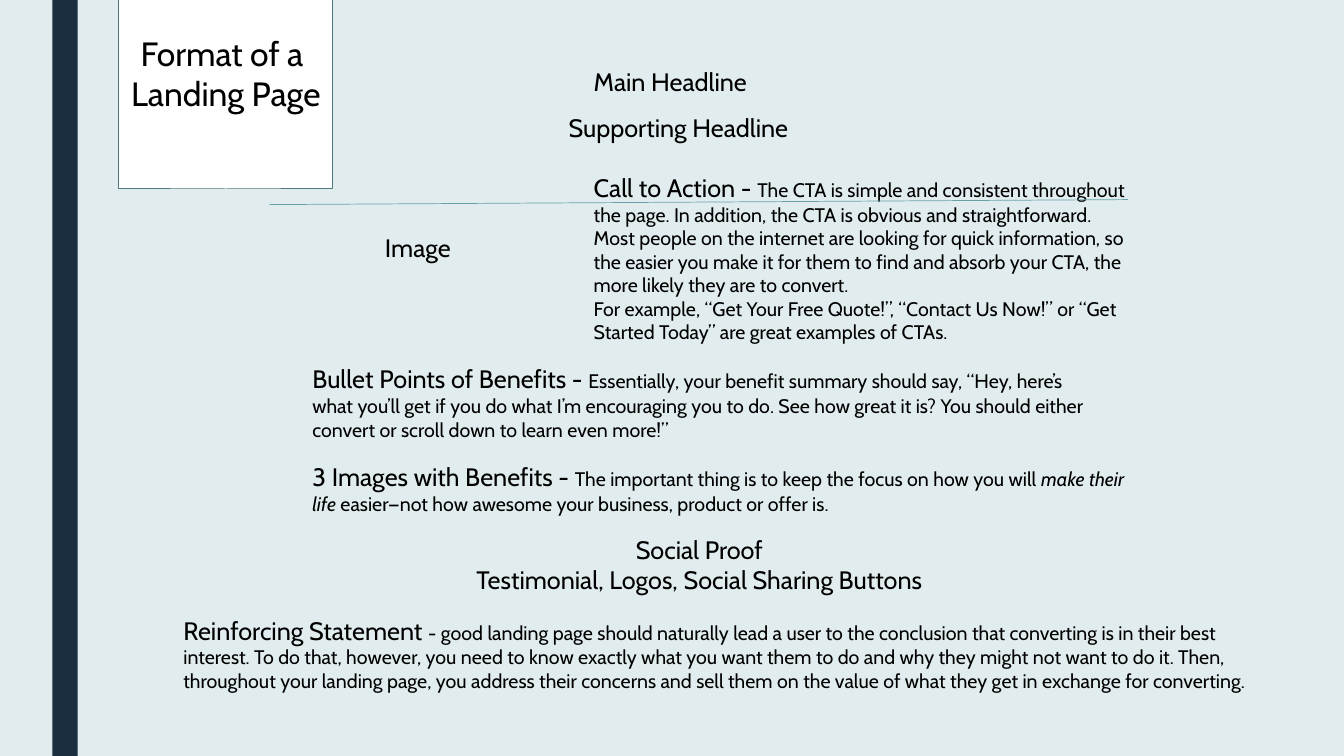
from lxml.etree import SubElement
from pptx import Presentation
from pptx.dml.color import RGBColor
from pptx.enum.shapes import MSO_CONNECTOR, MSO_SHAPE
from pptx.enum.text import MSO_ANCHOR, MSO_AUTO_SIZE, PP_ALIGN
from pptx.oxml.ns import qn
from pptx.util import Inches, Pt

FONT = "Cabin"
BACK, BAR, INK, WHITE = "E1ECEE", "1A2E40", "000000", "FFFFFF"
EDGE, RULE = "4E777F", "69A1AB"
LEAD, BODY, HEAD = 18, 14, 24

TITLE = ((1.18, 0.27, 2.12, 0.91), ["Format of a ", "Landing Page"])

LABELS = [
    ((5.79, 0.61, 1.75, 0.4), False, ["Main Headline"]),
    ((5.54, 1.07, 2.79, 0.4), False, ["Supporting Headline"]),
    ((3.72, 2.26, 0.86, 0.4), False, ["Image"]),
    ((4.59, 5.25, 4.69, 0.71), True,
     ["Social Proof", "Testimonial, Logos, Social Sharing Buttons"]),
]

NOTES = [
    ((5.79, 1.66, 5.54, 2.02), "Call to Action - ", [
        [("The CTA is simple and consistent throughout the page. In addition, "
          "the CTA is obvious and straightforward. Most people on the internet "
          "are looking for quick information, so the easier you make it for "
          "them to find and absorb your CTA, the more likely they are to "
          "convert.", False)],
        [("For example, “Get Your Free Quote!”, “Contact Us Now!” or “Get "
          "Started Today” are great examples of CTAs.", False)]]),
    ((3, 3.56, 7.86, 0.88), "Bullet Points of Benefits - ", [
        [("Essentially, your benefit summary should say, “Hey, here’s what "
          "you’ll get if you do what I’m encouraging you to do. See how great "
          "it is? You should either convert or scroll down to learn even "
          "more!”", False)]]),
    ((3, 4.53, 8.31, 0.64), "3 Images with Benefits - ", [
        [("The important thing is to keep the focus on how you will ", False),
         ("make their life", True),
         (" easier—not how awesome your business, product or offer is.",
          False)]]),
    ((1.72, 6.05, 11.02, 0.91), "Reinforcing Statement ", [
        [("- good landing page should naturally lead a user to the conclusion "
          "that converting is in their best interest. To do that, however, you "
          "need to know exactly what you want them to do and why they might "
          "not want to do it. Then, throughout your landing page, you address "
          "their concerns and sell them on the value of what they get in "
          "exchange for converting.", False)]]),
]


def color(code):
    return RGBColor.from_string(code)


def paint(item, code):
    item.fill.solid()
    item.fill.fore_color.rgb = color(code)


def style(para, size, mid=False):
    para.font.name = FONT
    para.font.size = Pt(size)
    para.font.color.rgb = color(INK)
    para.alignment = PP_ALIGN.CENTER if mid else PP_ALIGN.LEFT


def write(frame, lines, size, mid):
    for i, line in enumerate(lines):
        para = frame.add_paragraph() if i else frame.paragraphs[0]
        para.add_run().text = line
        style(para, size, mid)


def add_box(slide, place, wrap):
    frame = slide.shapes.add_textbox(*map(Inches, place)).text_frame
    frame.word_wrap = wrap
    frame.auto_size = MSO_AUTO_SIZE.SHAPE_TO_FIT_TEXT
    return frame


def add_note(slide, place, lead, paras):
    frame = add_box(slide, place, True)
    for i, parts in enumerate(paras):
        para = frame.add_paragraph() if i else frame.paragraphs[0]
        style(para, BODY)
        if i == 0:
            run = para.add_run()
            run.text = lead
            run.font.size = Pt(LEAD)
        for text, slant in parts:
            run = para.add_run()
            run.text = text
            if slant:
                run.font.italic = True


def add_title(slide, place, lines):
    title = slide.shapes.title
    title.left, title.top, title.width, title.height = map(Inches, place)
    paint(title, WHITE)
    title.line.color.rgb = color(EDGE)
    title.line.width = Pt(0.75)
    frame = title.text_frame
    frame.word_wrap = False
    frame.auto_size = MSO_AUTO_SIZE.SHAPE_TO_FIT_TEXT
    frame.vertical_anchor = MSO_ANCHOR.MIDDLE
    write(frame, lines, HEAD, True)


def add_rule(slide, *ends):
    rule = slide.shapes.add_connector(
        MSO_CONNECTOR.STRAIGHT, *map(Inches, ends))
    rule.line.color.rgb = color(RULE)
    rule.line.width = Pt(0.5)
    SubElement(rule._element.spPr, qn("a:effectLst"))


def main():
    deck = Presentation()
    deck.slide_width, deck.slide_height = Inches(13.33), Inches(7.5)
    slide = deck.slides.add_slide(deck.slide_layouts[5])
    paint(slide.background, BACK)

    bar = slide.shapes.add_shape(
        MSO_SHAPE.RECTANGLE, *map(Inches, (0.52, 0, 0.25, 7.5)))
    paint(bar, BAR)
    bar.line.fill.background()
    bar.shadow.inherit = False

    add_title(slide, *TITLE)
    for place, mid, lines in LABELS:
        write(add_box(slide, place, False), lines, LEAD, mid)
    for note in NOTES:
        add_note(slide, *note)
    add_rule(slide, 11.19, 1.98, 2.67, 2.03)
    deck.save("out.pptx")


if __name__ == "__main__":
    main()
